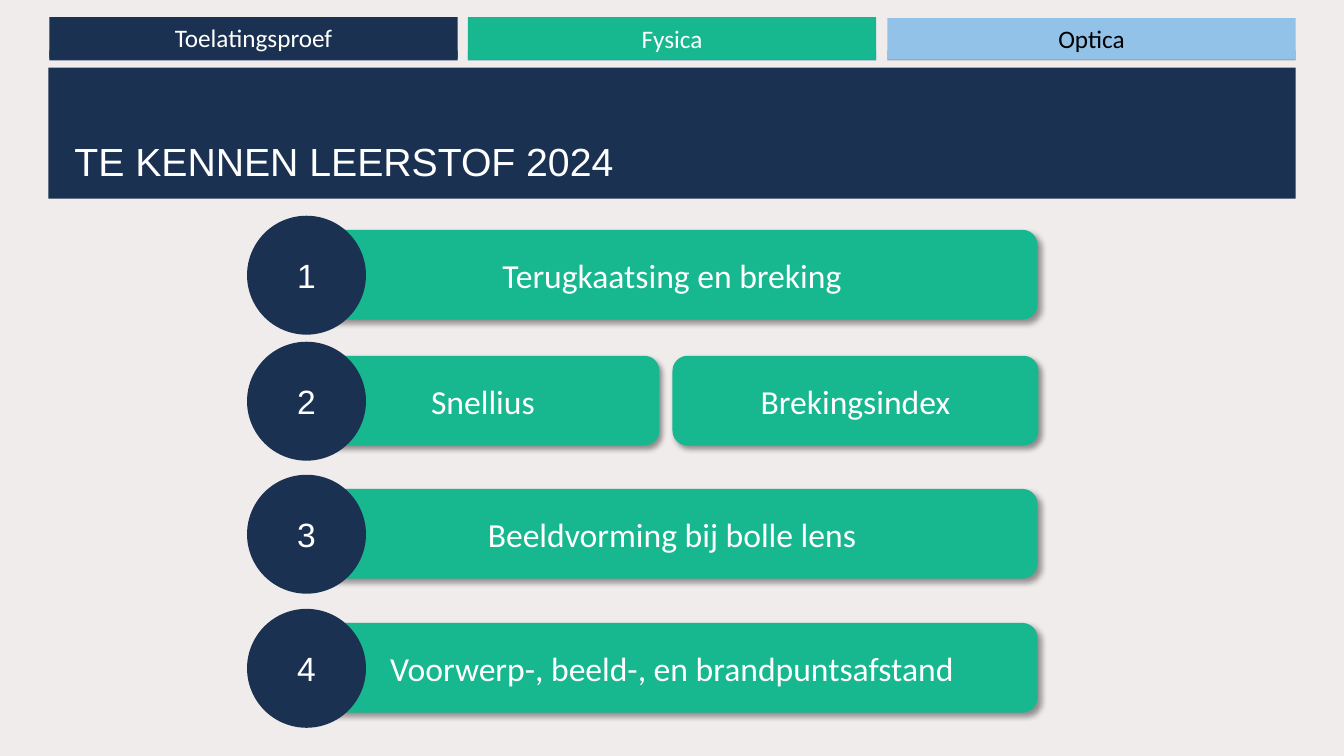
from dataclasses import dataclass

from lxml.etree import SubElement
from pptx import Presentation
from pptx.dml.color import RGBColor
from pptx.enum.shapes import MSO_SHAPE
from pptx.enum.text import MSO_ANCHOR, PP_ALIGN
from pptx.oxml.ns import qn
from pptx.shapes.autoshape import Shape
from pptx.slide import Slide
from pptx.util import Emu, Pt

PX = 9144  # 100 px to the inch
COLORS = {
    "background": "F0ECEB",
    "navy": "1B3151",
    "green": "17B790",
    "sky": "93C2E8",
    "white": "FFFFFF",
    "black": "000000",
    "navy_edge": "1A3260",
    "blue_edge": "4590B8",
    "grey_edge": "969FA7",
}


@dataclass(frozen=True)
class Box:
    left: int
    top: int
    width: int
    height: int

    def emu(self) -> list[Emu]:
        return [Emu(v * PX) for v in (self.left, self.top, self.width, self.height)]


@dataclass(frozen=True)
class Tab:
    text: str
    box: Box
    fill: str
    color: str
    edge: str


@dataclass(frozen=True)
class Topic:
    text: str
    left: int
    width: int


@dataclass(frozen=True)
class Row:
    top: int
    topics: tuple[Topic, ...]


TABS = (
    Tab("Toelatingsproef", Box(49, 17, 405, 41), "navy", "white", "navy_edge"),
    Tab("Fysica", Box(464, 17, 405, 42), "green", "white", "blue_edge"),
    Tab("Optica", Box(880, 18, 405, 41), "sky", "black", "grey_edge"),
)
BAR_LEFT, BAR_WIDTH, BAR_HEIGHT = 304, 725, 89
CIRCLE_LEFT, CIRCLE_SIZE = 245, 118
ROWS = (
    Row(214, (Topic("Terugkaatsing en breking", BAR_LEFT, BAR_WIDTH),)),
    Row(339, (Topic("Snellius", BAR_LEFT, 350), Topic("Brekingsindex", 667, 363))),
    Row(471, (Topic("Beeldvorming bij bolle lens", BAR_LEFT, BAR_WIDTH),)),
    Row(604, (Topic("Voorwerp-, beeld-, en brandpuntsafstand", BAR_LEFT, BAR_WIDTH),)),
)


def rgb(name: str) -> RGBColor:
    return RGBColor.from_string(COLORS[name])


def add_filled(s: Slide, kind: MSO_SHAPE, box: Box, fill: str) -> Shape:
    sp = s.shapes.add_shape(kind, *box.emu())
    sp.shadow.inherit = False
    sp.fill.solid()
    sp.fill.fore_color.rgb = rgb(fill)
    sp.line.fill.background()
    return sp


def set_text(sp: Shape, text: str, size: int, font: str, color: str = "white",
             align: PP_ALIGN = PP_ALIGN.CENTER,
             anchor: MSO_ANCHOR = MSO_ANCHOR.MIDDLE) -> None:
    tf = sp.text_frame
    tf.word_wrap = True
    tf.vertical_anchor = anchor
    p = tf.paragraphs[0]
    p.text = text
    p.alignment = align
    p.font.size = Pt(size)
    p.font.name = font
    p.font.color.rgb = rgb(color)


def add_shadow(sp: Shape) -> None:
    effects = sp._element.spPr.find(qn("a:effectLst"))
    shadow = SubElement(effects, qn("a:outerShdw"), blurRad=str(Pt(4)), dist=str(Pt(3)),
                        dir="2700000", algn="tl", rotWithShape="0")
    color = SubElement(shadow, qn("a:srgbClr"), val=COLORS["black"])
    SubElement(color, qn("a:alpha"), val="40000")


def add_tabs(s: Slide) -> None:
    for tab in TABS:
        edge = Box(tab.box.left, 50, tab.box.width, 10)
        add_filled(s, MSO_SHAPE.RECTANGLE, edge, tab.edge)
        sp = add_filled(s, MSO_SHAPE.RECTANGLE, tab.box, tab.fill)
        set_text(sp, tab.text, 18, "Calibri", tab.color)


def add_title(s: Slide) -> None:
    add_filled(s, MSO_SHAPE.RECTANGLE, Box(48, 67, 1237, 130), "navy")
    sp = s.shapes.add_textbox(*Box(64, 77, 1206, 111).emu())
    set_text(sp, "TE KENNEN LEERSTOF 2024", 28, "Arial",
             align=PP_ALIGN.LEFT, anchor=MSO_ANCHOR.BOTTOM)


def add_row(s: Slide, number: int, row: Row) -> None:
    bar_top = row.top + (CIRCLE_SIZE - BAR_HEIGHT) // 2
    for topic in row.topics:
        box = Box(topic.left, bar_top, topic.width, BAR_HEIGHT)
        sp = add_filled(s, MSO_SHAPE.ROUNDED_RECTANGLE, box, "green")
        add_shadow(sp)
        set_text(sp, topic.text, 24, "Calibri")
    circle = Box(CIRCLE_LEFT, row.top, CIRCLE_SIZE, CIRCLE_SIZE)
    set_text(add_filled(s, MSO_SHAPE.OVAL, circle, "navy"), str(number), 24, "Arial")


def main() -> None:
    prs = Presentation()
    prs.slide_width, prs.slide_height = Emu(1333 * PX), Emu(750 * PX)
    s = prs.slides.add_slide(prs.slide_layouts[6])
    s.background.fill.solid()
    s.background.fill.fore_color.rgb = rgb("background")

    # Header
    add_tabs(s)
    add_title(s)

    # Numbered topics
    for number, row in enumerate(ROWS, start=1):
        add_row(s, number, row)

    prs.save("out.pptx")


if __name__ == "__main__":
    main()
